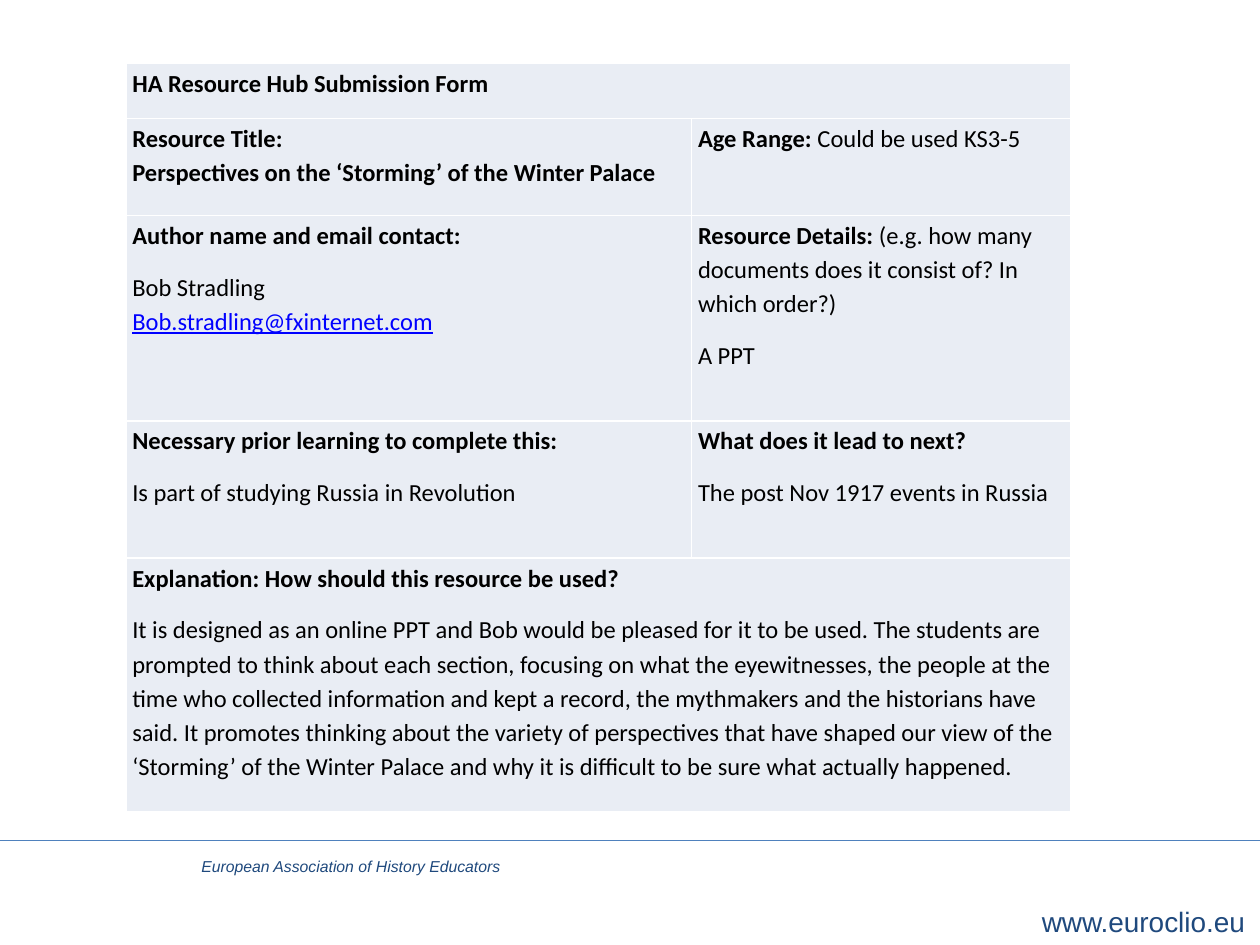
from lxml import etree
from pptx import Presentation
from pptx.dml.color import RGBColor
from pptx.enum import shapes, text
from pptx.oxml.ns import qn
from pptx.util import Inches, Pt

BLACK = RGBColor(0x00, 0x00, 0x00)
LINK_BLUE = RGBColor(0x00, 0x00, 0xFF)
NAVY = RGBColor(0x1F, 0x49, 0x7D)
RULE_BLUE = RGBColor(0x4F, 0x81, 0xBD)
CELL_FILL = RGBColor(0xE9, 0xED, 0xF4)

COLUMN_WIDTHS = [4.49, 3.01]
ROW_HEIGHTS = [0.44, 0.77, 1.63, 1.09, 2.01]

# Cell position -> paragraphs -> runs as (text, style)
FORM = {
    (0, 0): [[("HA Resource Hub Submission Form", "bold")]],
    (1, 0): [[("Resource Title:\vPerspectives on the ‘Storming’ of the Winter Palace", "bold")]],
    (1, 1): [[("Age Range: ", "bold"), ("Could be used KS3-5", "plain")]],
    (2, 0): [[("Author name and email contact:", "bold")],
             [("Bob Stradling\v", "plain"), ("Bob.stradling@fxinternet.com", "link")]],
    (2, 1): [[("Resource Details: ", "bold"),
              ("(e.g. how many documents does it consist of? In which order?)", "plain")],
             [("A PPT", "plain")]],
    (3, 0): [[("Necessary prior learning to complete this:", "bold")],
             [("Is part of studying Russia in Revolution", "plain")]],
    (3, 1): [[("What does it lead to next?", "bold")],
             [("The post Nov 1917 events in Russia", "plain")]],
    (4, 0): [[("Explanation: How should this resource be used?", "bold")],
             [("It is designed as an online PPT and Bob would be pleased for it to be used. "
               "The students are prompted to think about each section, focusing on what the "
               "eyewitnesses, the people at the time who collected information and kept a record, "
               "the mythmakers and the historians have said. It promotes thinking about the "
               "variety of perspectives that have shaped our view of the ‘Storming’ of the Winter "
               "Palace and why it is difficult to be sure what actually happened.", "plain")]],
}


def add_run(paragraph, words, font_name, size, color):
    run = paragraph.add_run()
    run.text = words
    run.font.name = font_name
    run.font.size = Pt(size)
    run.font.color.rgb = color
    return run


def set_white_borders(cell):
    properties = cell._tc.get_or_add_tcPr()
    for position, side in enumerate(("lnL", "lnR", "lnT", "lnB")):
        line = etree.Element(qn(f"a:{side}"), w=str(Pt(1)))
        fill = etree.SubElement(line, qn("a:solidFill"))
        etree.SubElement(fill, qn("a:srgbClr"), val="FFFFFF")
        properties.insert(position, line)


presentation = Presentation()
presentation.slide_width = Inches(10)
presentation.slide_height = Inches(7.5)
slide = presentation.slides.add_slide(presentation.slide_layouts[6])

# Footer rule
rule = slide.shapes.add_connector(
    shapes.MSO_CONNECTOR.STRAIGHT, Inches(0), Inches(6.67), Inches(10), Inches(6.67))
rule.line.color.rgb = RULE_BLUE
rule.line.width = Pt(0.5)
etree.SubElement(rule._element.spPr, qn("a:effectLst"))

# Footer texts
for words, left, top, width, height, size, italic in [
    ("European Association of History Educators", 1.5, 6.75, 2.63, 0.25, 9, True),
    ("www.euroclio.eu", 8.17, 7.13, 1.84, 0.37, 16, False),
]:
    box = slide.shapes.add_textbox(Inches(left), Inches(top), Inches(width), Inches(height))
    box.text_frame.word_wrap = False
    box.text_frame.auto_size = text.MSO_AUTO_SIZE.SHAPE_TO_FIT_TEXT
    run = add_run(box.text_frame.paragraphs[0], words, "Arial", size, NAVY)
    run.font.italic = italic

# Submission form grid
table = slide.shapes.add_table(
    len(ROW_HEIGHTS), len(COLUMN_WIDTHS), Inches(1), Inches(0.5),
    Inches(sum(COLUMN_WIDTHS)), Inches(sum(ROW_HEIGHTS))).table
table.first_row = False
table.horz_banding = False
for column, width in zip(table.columns, COLUMN_WIDTHS):
    column.width = Inches(width)
for row, height in zip(table.rows, ROW_HEIGHTS):
    row.height = Inches(height)
for full_row in (0, 4):
    table.cell(full_row, 0).merge(table.cell(full_row, 1))
for cell in (cell for row in table.rows for cell in row.cells):
    cell.fill.solid()
    cell.fill.fore_color.rgb = CELL_FILL
    cell.margin_left = cell.margin_right = Inches(0.05)
    cell.margin_top = Inches(0.01)
    cell.margin_bottom = Inches(0)
    set_white_borders(cell)

# Form entries
for (row_index, column_index), paragraphs in FORM.items():
    frame = table.cell(row_index, column_index).text_frame
    for index, runs in enumerate(paragraphs):
        paragraph = frame.add_paragraph() if index else frame.paragraphs[0]
        paragraph.line_spacing = 1.15
        paragraph.space_after = Pt(10)
        for words, style in runs:
            for line_index, line_words in enumerate(words.split("\v")):
                if line_index:
                    paragraph.add_line_break()
                if line_words:
                    color = LINK_BLUE if style == "link" else BLACK
                    run = add_run(paragraph, line_words, "Calibri", 14, color)
                    run.font.bold = style == "bold"
                    run.font.underline = style == "link"

presentation.save("out.pptx")
